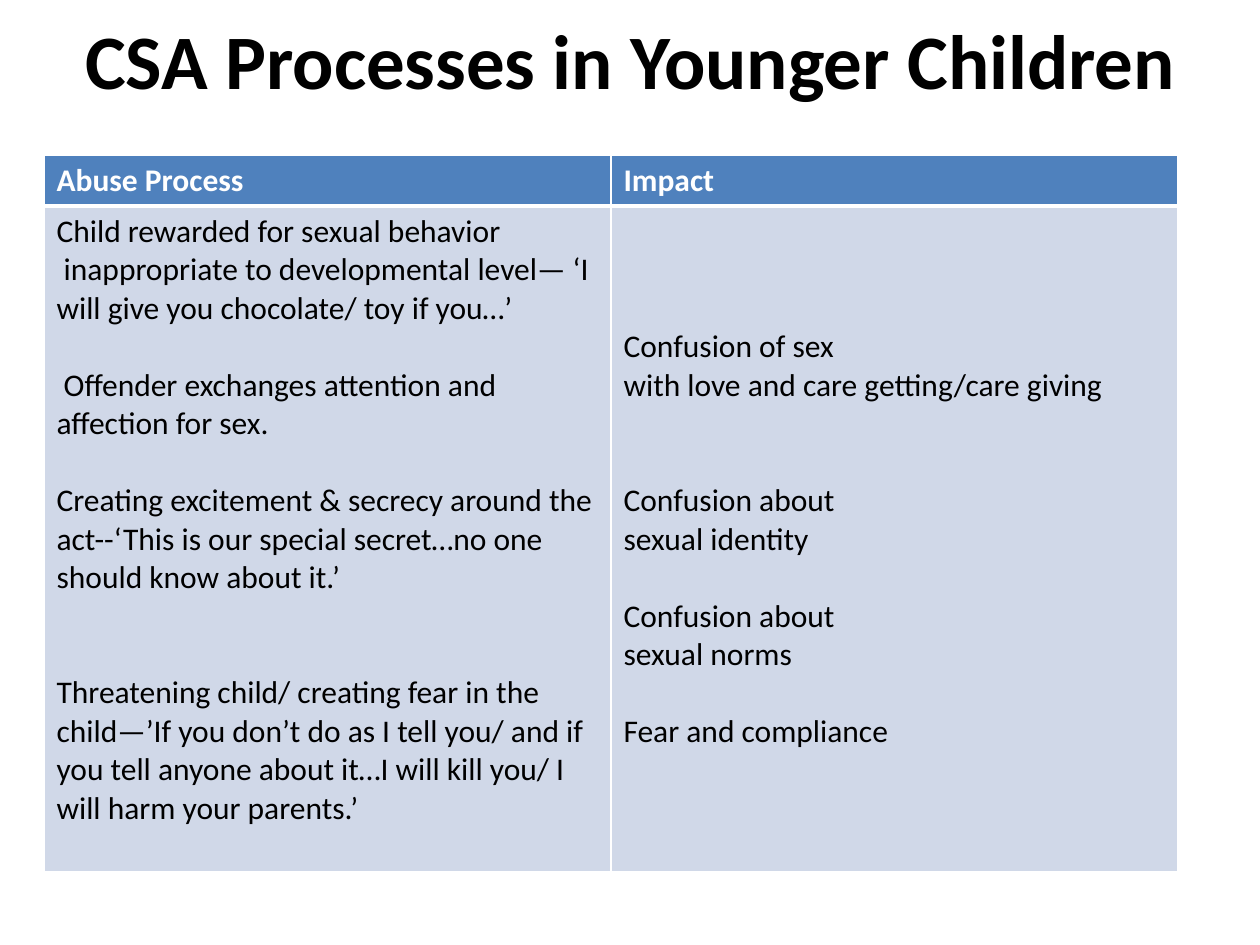
from dataclasses import dataclass

from lxml.etree import SubElement
from pptx import Presentation
from pptx.dml.color import RGBColor as Rgb
from pptx.enum.text import MSO_ANCHOR as Anchor, PP_ALIGN as Align
from pptx.oxml.ns import qn
from pptx.util import Emu, Pt

PX_PER_INCH = 126
LINE_PT = 22  # height of one body line, used for the gaps between passages


@dataclass(frozen=True)
class Theme:
    font: str = "Calibri"
    ink: str = "000000"
    paper: str = "FFFFFF"
    header: str = "4F81BD"
    body: str = "D0D8E8"
    title_size: int = 44
    text_size: int = 18


def px(length):
    return Emu(round(length * 914400 / PX_PER_INCH))


def write(paragraph, text, *, font, size, color, bold=False, align=Align.LEFT, before=0):
    paragraph.alignment = align
    paragraph.space_before = Pt(before)
    run = paragraph.add_run()
    run.text = text
    run.font.name = font
    run.font.size = Pt(size)
    run.font.bold = bold
    run.font.color.rgb = Rgb.from_string(color)


def set_borders(cell, color, **widths):
    """Draw the cell's sides L, R, T and B with the given widths in points."""
    properties = cell._tc.get_or_add_tcPr()
    for position, (side, width) in enumerate(widths.items()):
        border = SubElement(properties, qn(f"a:ln{side}"), w=str(Pt(width)))
        fill = SubElement(border, qn("a:solidFill"))
        SubElement(fill, qn("a:srgbClr"), val=color)
        properties.insert(position, border)


class SlideBuilder:
    def __init__(self, slide, theme):
        self.slide = slide
        self.theme = theme

    def title(self, text, left, top, width, height):
        heading = self.slide.shapes.title
        heading.left, heading.top = px(left), px(top)
        heading.width, heading.height = px(width), px(height)
        heading.text_frame.vertical_anchor = Anchor.MIDDLE
        write(heading.text_frame.paragraphs[0], text, font=self.theme.font,
              size=self.theme.title_size, color=self.theme.ink, bold=True,
              align=Align.CENTER)

    def cell(self, cell, passages, *, fill, color, bold=False, bottom=1):
        """Fill a cell with passages, each a pair of blank lines before and text."""
        cell.fill.solid()
        cell.fill.fore_color.rgb = Rgb.from_string(fill)
        set_borders(cell, self.theme.paper, L=1, R=1, T=1, B=bottom)
        frame = cell.text_frame
        for index, (gap, text) in enumerate(passages):
            paragraph = frame.add_paragraph() if index else frame.paragraphs[0]
            if index == 0:
                cell.margin_top += Pt(gap * LINE_PT)
            write(paragraph, text, font=self.theme.font, size=self.theme.text_size,
                  color=color, bold=bold, before=gap * LINE_PT if index else 0)

    def table(self, columns, left, top, width, row_heights):
        """Add a table from a mapping of column heading to passages."""
        table = self.slide.shapes.add_table(
            len(row_heights), len(columns), px(left), px(top),
            px(width), px(sum(row_heights))).table
        table.horz_banding = False
        for row, height in zip(table.rows, row_heights):
            row.height = px(height)
        for index, (heading, passages) in enumerate(columns.items()):
            table.columns[index].width = px(width // len(columns))
            self.cell(table.cell(0, index), [(0, heading)], fill=self.theme.header,
                      color=self.theme.paper, bold=True, bottom=3)
            self.cell(table.cell(1, index), passages, fill=self.theme.body,
                      color=self.theme.ink)


ABUSE_PROCESS = [
    (0, "Child rewarded for sexual behavior"),
    (0, " inappropriate to developmental level— ‘I will give you chocolate/ toy if you…’"),
    (1, " Offender exchanges attention and"),
    (0, "affection for sex."),
    (1, "Creating excitement & secrecy around the act--‘This is our special secret…"
        "no one should know about it.’"),
    (2, "Threatening child/ creating fear in the child—’If you don’t do as I tell you/ "
        "and if you tell anyone about it…I will kill you/ I will harm your parents.’"),
]
IMPACT = [
    (3, "Confusion of sex"),
    (0, "with love and care getting/care giving"),
    (2, "Confusion about"),
    (0, "sexual identity"),
    (1, "Confusion about"),
    (0, "sexual norms"),
    (1, "Fear and compliance"),
]


def main():
    deck = Presentation()
    deck.slide_width, deck.slide_height = px(1260), px(945)
    title_only = deck.slide_layouts[5]
    builder = SlideBuilder(deck.slides.add_slide(title_only), Theme())
    builder.title("CSA Processes in Younger Children", 64, 0, 1134, 117)
    builder.table({"Abuse Process": ABUSE_PROCESS, "Impact": IMPACT},
                  44, 155, 1134, row_heights=(51, 666))
    deck.save("out.pptx")


if __name__ == "__main__":
    main()
